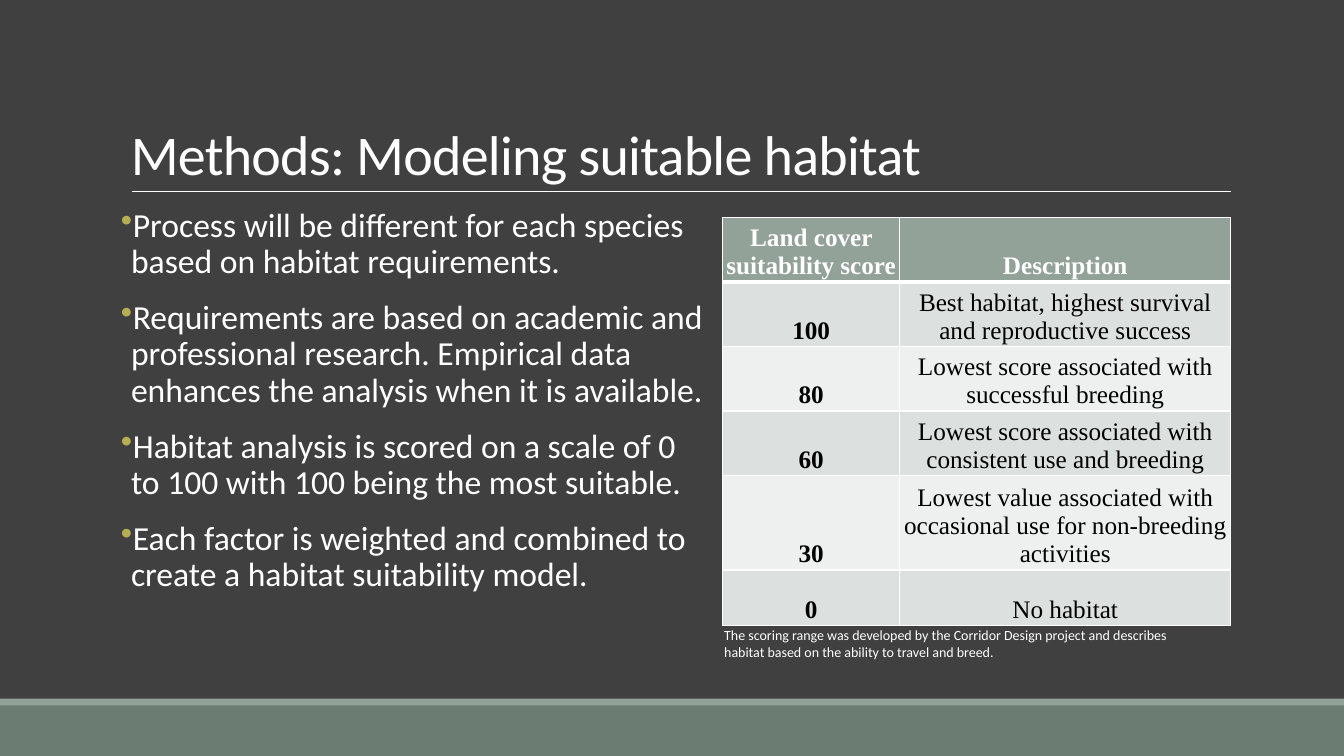
from lxml import etree
from pptx import Presentation
from pptx.dml.color import RGBColor
from pptx.enum.shapes import MSO_CONNECTOR, MSO_SHAPE
from pptx.enum.text import MSO_ANCHOR, PP_ALIGN
from pptx.oxml.ns import qn
from pptx.util import Pt

RECTANGLE = MSO_SHAPE.RECTANGLE
STRAIGHT = MSO_CONNECTOR.STRAIGHT
TOP, BOTTOM = MSO_ANCHOR.TOP, MSO_ANCHOR.BOTTOM
CENTER = PP_ALIGN.CENTER

COLORS = {
    "background": "404040",
    "footer": "6B7D72",
    "sage": "93A299",
    "bullet": "B5AE53",
    "band_dark": "DCE0DE",
    "band_light": "EEF0EF",
    "white": "FFFFFF",
    "black": "000000",
}

BULLETS = [
    "Process will be different for each species based on habitat requirements.",
    "Requirements are based on academic and professional research. "
    "Empirical data enhances the analysis when it is available.",
    "Habitat analysis is scored on a scale of 0 to 100 with 100 being the most suitable.",
    "Each factor is weighted and combined to create a habitat suitability model.",
]

SCORES = [
    ("Land cover suitability score", "Description"),
    ("100", "Best habitat, highest survival and reproductive success"),
    ("80", "Lowest score associated with successful breeding"),
    ("60", "Lowest score associated with consistent use and breeding"),
    ("30", "Lowest value associated with occasional use for non-breeding activities"),
    ("0", "No habitat"),
]


def rgb(name):
    return RGBColor.from_string(COLORS[name])


def write(para, text, size=18, font="Calibri", color="white", bold=False, spacing=None):
    span = para.add_run()
    span.text = text
    span.font.size = Pt(size)
    span.font.name = font
    span.font.bold = bold
    span.font.color.rgb = rgb(color)
    if spacing is not None:
        span.font._element.set("spc", str(spacing))


def add_bullet(para):
    properties = para._p.get_or_add_pPr()
    properties.set("marL", str(Pt(7.2)))
    properties.set("indent", str(Pt(-7.2)))
    color = etree.SubElement(properties, qn("a:buClr"))
    etree.SubElement(color, qn("a:srgbClr"), val=COLORS["bullet"])
    etree.SubElement(properties, qn("a:buChar"), char="•")


def add_text(page, left, top, width, height, texts, anchor=TOP, inset=7.2,
             line_spacing=None, before=0, after=0, bulleted=False, **style):
    frame = page.shapes.add_textbox(Pt(left), Pt(top), Pt(width), Pt(height)).text_frame
    frame.word_wrap = True
    frame.vertical_anchor = anchor
    frame.margin_left = frame.margin_right = Pt(inset)
    for index, text in enumerate(texts):
        para = frame.add_paragraph() if index else frame.paragraphs[0]
        para.line_spacing = line_spacing
        para.space_before, para.space_after = Pt(before), Pt(after)
        if bulleted:
            add_bullet(para)
        write(para, text, **style)


def add_band(page, top, height, color):
    band = page.shapes.add_shape(RECTANGLE, Pt(0), Pt(top), Pt(960), Pt(height))
    band.shadow.inherit = False
    band.fill.solid()
    band.fill.fore_color.rgb = rgb(color)
    band.line.fill.background()


def add_rule(page, left, right, y):
    rule = page.shapes.add_connector(STRAIGHT, Pt(left), Pt(y), Pt(right), Pt(y))
    rule.line.color.rgb = rgb("white")
    rule.line.width = Pt(0.5)
    etree.SubElement(rule._element.spPr, qn("a:effectLst"))


def set_borders(cell, top, bottom):
    properties = cell._tc.get_or_add_tcPr()
    widths = {"lnL": 1, "lnR": 1, "lnT": top, "lnB": bottom}
    for index, (side, width) in enumerate(widths.items()):
        border = etree.Element(qn(f"a:{side}"), w=str(Pt(width)))
        fill = etree.SubElement(border, qn("a:solidFill"))
        etree.SubElement(fill, qn("a:srgbClr"), val=COLORS["white"])
        properties.insert(index, border)


def add_score_table(page, left, top, widths, row_height):
    table = page.shapes.add_table(
        len(SCORES), len(widths), Pt(left), Pt(top),
        Pt(sum(widths)), Pt(row_height * len(SCORES))).table
    for column, width in zip(table.columns, widths):
        column.width = Pt(width)
    for row, texts in enumerate(SCORES):
        header = row == 0
        fill = "sage" if header else "band_dark" if row % 2 else "band_light"
        for column, text in enumerate(texts):
            cell = table.cell(row, column)
            cell.fill.solid()
            cell.fill.fore_color.rgb = rgb(fill)
            cell.vertical_anchor = BOTTOM
            cell.margin_left = cell.margin_right = Pt(2.2)
            cell.margin_top = cell.margin_bottom = Pt(1.4)
            set_borders(cell, top=3 if row == 1 else 1, bottom=3 if header else 1)
            para = cell.text_frame.paragraphs[0]
            para.alignment = CENTER
            write(para, text, font="Times New Roman",
                  color="white" if header else "black", bold=header or column == 0)


def main():
    deck = Presentation()
    deck.slide_width, deck.slide_height = Pt(960), Pt(540)
    page = deck.slides.add_slide(deck.slide_layouts[6])
    page.background.fill.solid()
    page.background.fill.fore_color.rgb = rgb("background")

    add_band(page, 504, 36, "footer")
    add_band(page, 499, 5, "sage")
    add_rule(page, 94.3, 879, 136.8)
    add_text(page, 86.4, 22.3, 792, 114.5, ["Methods: Modeling suitable habitat"],
             anchor=BOTTOM, line_spacing=0.85, size=40, spacing=-50)
    add_text(page, 86.4, 145.4, 417, 317, BULLETS, inset=0, line_spacing=0.9,
             before=12, after=2, bulleted=True, size=24)
    add_score_table(page, 516.2, 155.5, [126.5, 236.5], 39.6)
    add_text(page, 510.2, 444.2, 356.4, 31.7,
             ["The scoring range was developed by the Corridor Design project and "
              "describes habitat based on the ability to travel and breed."], size=10)
    deck.save("out.pptx")


if __name__ == "__main__":
    main()
